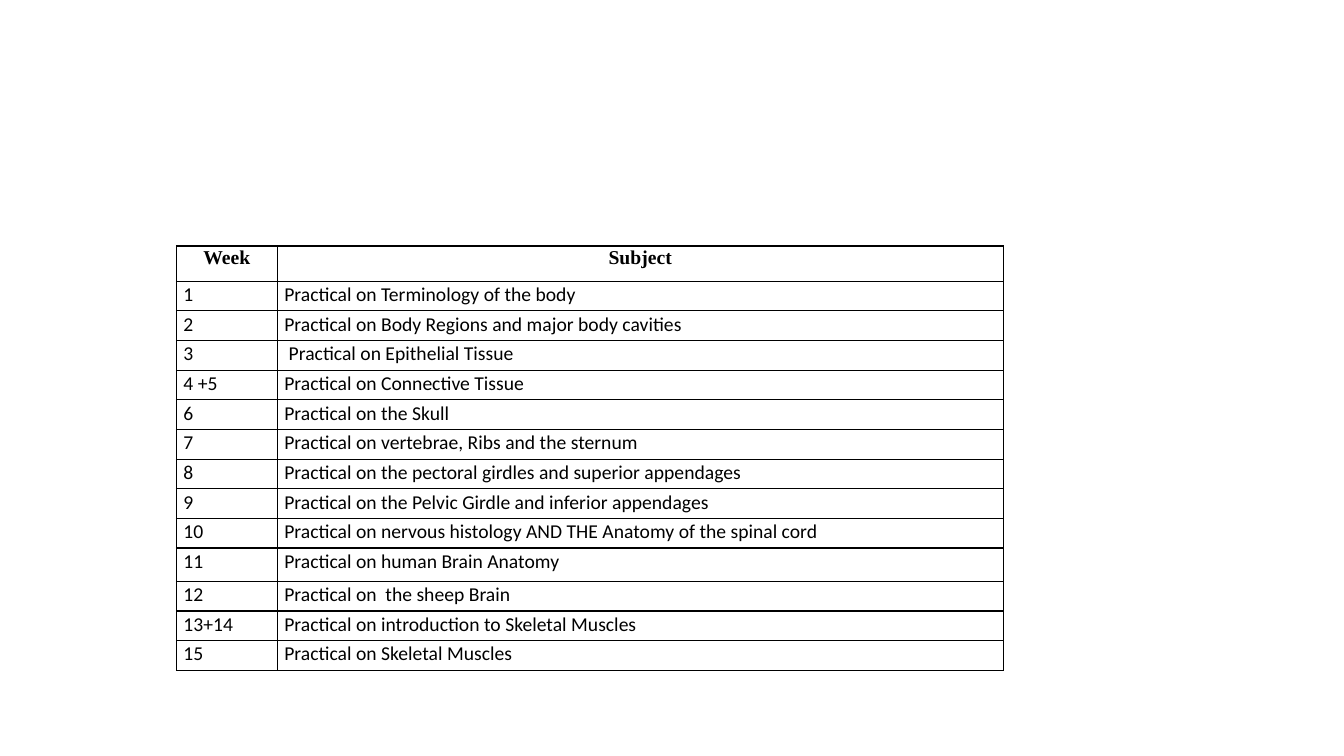
"""Build the weekly schedule slide of the anatomy practicals."""
from lxml.etree import SubElement
from pptx import Presentation
from pptx.dml.color import RGBColor
from pptx.enum.text import PP_ALIGN
from pptx.oxml.ns import qn
from pptx.util import Inches, Pt

SCHEDULE = [
    ("Week", "Subject"),
    ("1", "Practical on Terminology of the body"),
    ("2", "Practical on Body Regions and major body cavities"),
    ("3", " Practical on Epithelial Tissue"),
    ("4 +5", "Practical on Connective Tissue"),
    ("6", "Practical on the Skull"),
    ("7", "Practical on vertebrae, Ribs and the sternum"),
    ("8", "Practical on the pectoral girdles and superior appendages"),
    ("9", "Practical on the Pelvic Girdle and inferior appendages"),
    ("10", "Practical on nervous histology AND THE Anatomy of the spinal cord"),
    ("11", "Practical on human Brain Anatomy"),
    ("12", "Practical on  the sheep Brain"),
    ("13+14", "Practical on introduction to Skeletal Muscles"),
    ("15", "Practical on Skeletal Muscles"),
]
LEFT, TOP, WIDTH, HEIGHT = 1.75, 2.44, 8.2, 4.21
WEEK_WIDTH = 1
TALL_ROWS = {0: 0.35, 10: 0.33}
BLACK = "000000"


def color(hex_code):
    return RGBColor.from_string(hex_code)


def add_borders(cell):
    properties = cell._tc.get_or_add_tcPr()
    for side in ("lnL", "lnR", "lnT", "lnB"):
        border = SubElement(properties, qn(f"a:{side}"), w=str(Pt(1)))
        fill = SubElement(border, qn("a:solidFill"))
        SubElement(fill, qn("a:srgbClr"), val=BLACK)


def write_cell(cell, wording, is_header):
    add_borders(cell)
    cell.fill.background()
    cell.margin_left = cell.margin_right = Inches(0.07)
    cell.margin_top = cell.margin_bottom = 0
    cell.text_frame.text = wording
    paragraph = cell.text_frame.paragraphs[0]
    paragraph.line_spacing = 1.07
    paragraph.alignment = PP_ALIGN.CENTER if is_header else PP_ALIGN.LEFT
    paragraph.space_after = Pt(0 if is_header else 8)
    font = paragraph.runs[0].font
    font.name = "Times New Roman" if is_header else "Calibri"
    font.size = Pt(14)
    font.bold = is_header
    font.color.rgb = color(BLACK)


def main():
    presentation = Presentation()
    presentation.slide_width, presentation.slide_height = Inches(13.33), Inches(7.5)
    slide = presentation.slides.add_slide(presentation.slide_layouts[6])
    schedule = slide.shapes.add_table(
        len(SCHEDULE), 2, Inches(LEFT), Inches(TOP), Inches(WIDTH), Inches(HEIGHT)
    ).table
    schedule.first_row = schedule.horz_banding = False
    schedule.columns[0].width = Inches(WEEK_WIDTH)
    schedule.columns[1].width = Inches(WIDTH - WEEK_WIDTH)
    plain_height = (HEIGHT - sum(TALL_ROWS.values())) / (len(SCHEDULE) - len(TALL_ROWS))

    for row, entry in enumerate(SCHEDULE):
        schedule.rows[row].height = Inches(TALL_ROWS.get(row, plain_height))
        for column, wording in enumerate(entry):
            write_cell(schedule.cell(row, column), wording, row == 0)

    presentation.save("out.pptx")


if __name__ == "__main__":
    main()
